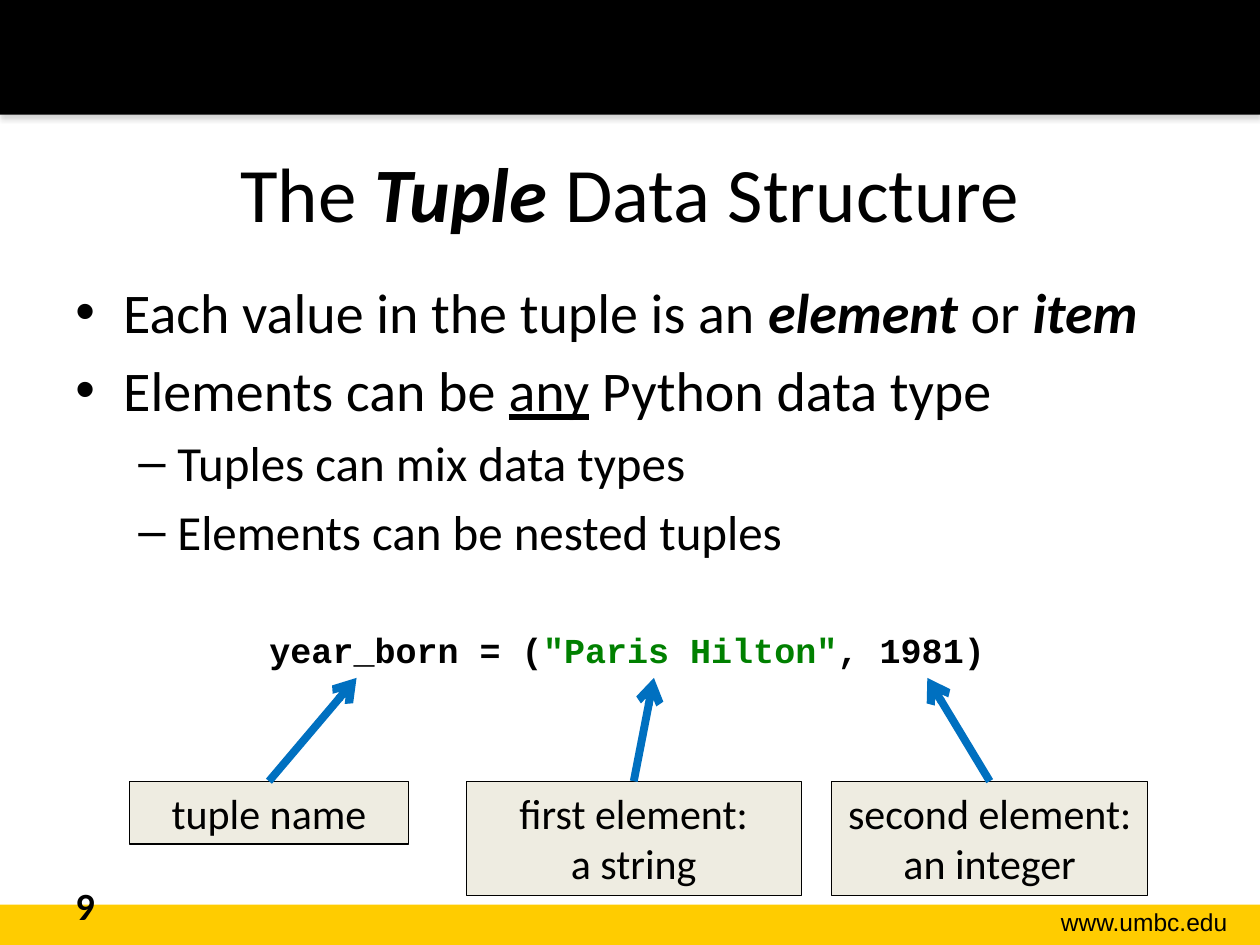
from lxml import etree
from pptx import Presentation
from pptx.dml.color import RGBColor
from pptx.enum.shapes import MSO_CONNECTOR, MSO_SHAPE
from pptx.enum.text import MSO_ANCHOR, PP_ALIGN
from pptx.oxml import parse_xml
from pptx.oxml.ns import nsdecls, qn
from pptx.util import Inches, Pt

COLORS = {"black": "000000", "gold": "FFCC00", "beige": "EEECE1",
          "blue": "0070C0", "green": "008000"}


def color(name):
    return RGBColor.from_string(COLORS[name])


def add_runs(paragraph, runs, size, font="Calibri"):
    """Add (text, style) runs; style holds any of b, i, u and a colour name."""
    for text, style in runs:
        run = paragraph.add_run()
        run.text = text
        run.font.name = font
        run.font.size = Pt(size)
        run.font.bold = "b" in style
        run.font.italic = "i" in style
        run.font.underline = "u" in style
        run.font.color.rgb = color(style.get("color", "black"))


prs = Presentation()
prs.slide_width, prs.slide_height = Inches(10), Inches(7.5)
slide = prs.slides.add_slide(prs.slide_layouts[6])
shapes = slide.shapes

# Footer and header bands
for top, height, fill in [(7.18, 0.32, "gold"), (0, 0.91, "black")]:
    band = shapes.add_shape(MSO_SHAPE.RECTANGLE, 0, Inches(top), Inches(10), Inches(height))
    band.shadow.inherit = False
    band.fill.solid()
    band.fill.fore_color.rgb = color(fill)
    band.line.fill.background()
    if fill == "black":
        band._element.spPr.find(qn("a:effectLst")).append(parse_xml(
            f'<a:outerShdw {nsdecls("a")} blurRad="{Pt(3.1)}" dist="{Pt(1.8)}" '
            'dir="5400000" rotWithShape="0"><a:srgbClr val="808080">'
            '<a:alpha val="35000"/></a:srgbClr></a:outerShdw>'))

# Single-line texts: place, alignment, wrapping, size, font, runs
B = {"b": True}
BI = {"b": True, "i": True}
lines = [
    ((7.85, 7.15, 1.99, 0.34), PP_ALIGN.RIGHT, True, 14, "Arial", [("www.umbc.edu", {})]),
    ((0.5, 0.9, 9, 1.25), PP_ALIGN.CENTER, True, 44, "Calibri",
     [("The ", {}), ("Tuple ", BI), ("Data Structure", {})]),
    ((0.5, 6.95, 2.33, 0.4), PP_ALIGN.LEFT, True, 22, "Calibri", [("9", B)]),
    ((2.04, 4.94, 5.92, 0.44), PP_ALIGN.LEFT, False, 20, "Courier New",
     [("year_born = (", B), ('"Paris Hilton"', {"b": True, "color": "green"}),
      (", 1981)", B)]),
]
for place, align, wrap, size, font, runs in lines:
    frame = shapes.add_textbox(*map(Inches, place)).text_frame
    frame.word_wrap = wrap
    if size == 44:
        frame.vertical_anchor = MSO_ANCHOR.MIDDLE
    frame.paragraphs[0].alignment = align
    add_runs(frame.paragraphs[0], runs, size, font)

# Bullets: level and runs
bullets = [
    (0, [("Each value in the tuple is an ", {}), ("element", BI), (" or ", {}), ("item", BI)]),
    (0, [("Elements can be ", {}), ("any", {"u": True}), (" Python data type", {})]),
    (1, [("Tuples can mix data types", {})]),
    (1, [("Elements can be nested tuples", {})]),
]
levels = [("•", 0.38, -0.38, 32), ("–", 0.81, -0.31, 28)]
body = shapes.add_textbox(Inches(0.5), Inches(2.15), Inches(9), Inches(4.55)).text_frame
body.word_wrap = True
for number, (level, runs) in enumerate(bullets):
    mark, margin, indent, size = levels[level]
    point = body.add_paragraph() if number else body.paragraphs[0]
    point.level = level
    props = point._p.get_or_add_pPr()
    props.set("marL", str(Inches(margin)))
    props.set("indent", str(Inches(indent)))
    etree.SubElement(props, qn("a:buFont")).set("typeface", "Arial")
    etree.SubElement(props, qn("a:buChar")).set("char", mark)
    if number:
        point.space_before = Pt(size * 0.2)
    add_runs(point, runs, size)

# Labels, each with an arrow from its top edge to the code
LABEL_TOP, CODE_BOTTOM = 6.2, 5.38
labels = [
    (1.03, 2.21, 0.5, ["tuple name"], 2.83),
    (3.7, 2.66, 0.91, ["first element:", "a string"], 5.19),
    (6.6, 2.51, 0.91, ["second element: an integer"], 7.36),
]
for left, width, height, rows, target in labels:
    label = shapes.add_shape(MSO_SHAPE.RECTANGLE, Inches(left), Inches(LABEL_TOP),
                             Inches(width), Inches(height))
    label.shadow.inherit = False
    label.fill.solid()
    label.fill.fore_color.rgb = color("beige")
    label.line.color.rgb = color("black")
    label.line.width = Pt(0.75)
    label.text_frame.word_wrap = True
    label.text_frame.vertical_anchor = MSO_ANCHOR.TOP
    caption = label.text_frame.paragraphs[0]
    caption.alignment = PP_ALIGN.CENTER
    for number, row in enumerate(rows):
        if number:
            caption.add_line_break()
        add_runs(caption, [(row, {})], 24)

    arrow = shapes.add_connector(MSO_CONNECTOR.STRAIGHT, Inches(left + width / 2),
                                 Inches(LABEL_TOP), Inches(target), Inches(CODE_BOTTOM))
    arrow.line.color.rgb = color("blue")
    arrow.line.width = Pt(4.5)
    etree.SubElement(arrow.line._get_or_add_ln(), qn("a:tailEnd")).set("type", "arrow")
    etree.SubElement(arrow._element.spPr, qn("a:effectLst"))

prs.save("out.pptx")
